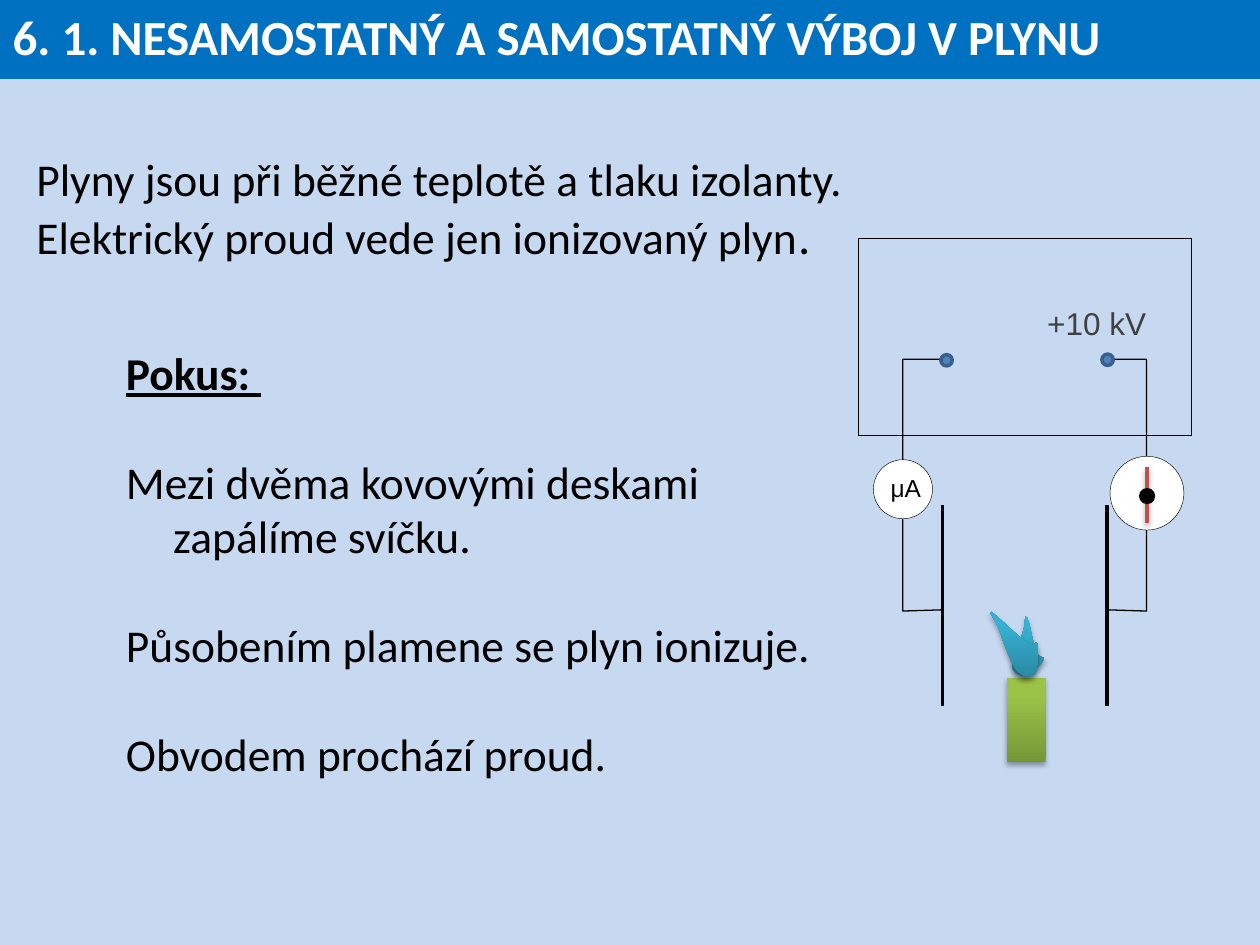
from lxml import etree
from pptx import Presentation
from pptx.dml.color import RGBColor
from pptx.enum.shapes import MSO_CONNECTOR as CONN, MSO_SHAPE as SHAPE
from pptx.enum.text import MSO_ANCHOR as ANCHOR, PP_ALIGN as ALIGN
from pptx.oxml.ns import qn
from pptx.util import Pt

FLAME_COLORS = "2A88A2", "37B1D2"
CANDLE_COLORS = "779737", "9BC348"
BACK_FLAME = [
    (7.2, 36),
    (4.3, 36), (0, 33.8), (0, 29.5),
    (0, 25.2), (5, 15.1), (6.5, 10.1),
    (7.9, 5.8), (7.2, 0), (8.6, 2.2),
    (10.1, 4.3), (12.2, 18.7), (14.4, 22.3),
    (15.8, 26.6), (19.4, 23.8), (18.7, 25.9),
    (17.3, 28.8), (10.1, 35.3), (7.2, 36),
]
FRONT_FLAME = [
    (27.4, 36.7),
    (25.2, 39.6), (20.2, 38.9), (16.6, 34.6),
    (13, 30.2), (8.6, 16.6), (6.5, 10.8),
    (4.3, 5.8), (0, 0), (2.2, 1.4),
    (5, 2.9), (18, 15.8), (22.3, 18.7),
    (26.6, 22.3), (27.4, 16.6), (28.8, 20.2),
    (29.5, 23), (28.8, 34.6), (27.4, 36.7),
]


def rgb(color):
    return RGBColor.from_string(color)


def assign(obj, values):
    for name, value in values.items():
        setattr(obj, name, value)


def set_line(sp, color, width):
    sp.line.fill.solid()
    sp.line.color.rgb = rgb(color)
    sp.line.width = Pt(width)


def set_gradient(sp, colors):
    sp.fill.gradient()
    sp.fill.gradient_angle = 90
    for stop, color, position in zip(sp.fill.gradient_stops, colors, (0, 0.8)):
        stop.color.rgb = rgb(color)
        stop.position = position
    sp.line.fill.background()


def add_shadow(effects):
    shadow = etree.SubElement(effects, qn("a:outerShdw"), blurRad=str(Pt(3.1)),
                              dist=str(Pt(1.8)), dir="5400000", rotWithShape="0")
    color = etree.SubElement(shadow, qn("a:srgbClr"), val="000000")
    etree.SubElement(color, qn("a:alpha"), val="35000")


def add_box(s, kind, x, y, w, h, fill=None, line=None):
    sp = s.shapes.add_shape(kind, Pt(x), Pt(y), Pt(w), Pt(h))
    sp.shadow.inherit = False
    if fill:
        sp.fill.solid()
        sp.fill.fore_color.rgb = rgb(fill)
    else:
        sp.fill.background()
    if line:
        set_line(sp, *line)
    return sp


def add_disc(s, cx, cy, d, fill, line):
    return add_box(s, SHAPE.OVAL, cx - d / 2, cy - d / 2, d, d, fill, line)


def add_straight(s, x, y1, y2, color, width):
    c = s.shapes.add_connector(CONN.STRAIGHT, Pt(x), Pt(y1), Pt(x), Pt(y2))
    set_line(c, color, width)
    return etree.SubElement(c._element.spPr, qn("a:effectLst"))


def add_outline(s, x, y, points, close):
    pts = [(Pt(x + px), Pt(y + py)) for px, py in points]
    builder = s.shapes.build_freeform(*pts[0])
    builder.add_line_segments(pts[1:], close=close)
    sp = builder.convert_to_shape()
    sp.shadow.inherit = False
    return sp


def add_run(p, text, size, color="000000", font="Calibri", **extra):
    r = p.add_run()
    r.text = text
    assign(r.font, {"size": Pt(size), "name": font, **extra})
    r.font.color.rgb = rgb(color)


def add_label(s, x, y, w, h, text, size, color):
    tf = s.shapes.add_textbox(Pt(x), Pt(y), Pt(w), Pt(h)).text_frame
    tf.word_wrap = False
    add_run(tf.paragraphs[0], text, size, color, "Arial")


def bend_segments(sp):
    segments = list(sp._element.iter(qn("a:lnTo")))
    for i in range(0, len(segments) - 2, 3):
        curve = etree.Element(qn("a:cubicBezTo"))
        segments[i].addprevious(curve)
        for segment in segments[i:i + 3]:
            curve.append(segment[0])
            segment.getparent().remove(segment)


def add_flame(s, x, y, points):
    sp = add_outline(s, x, y, points, True)
    bend_segments(sp)
    set_gradient(sp, FLAME_COLORS)
    add_shadow(sp._element.spPr.find(qn("a:effectLst")))


def add_title(s, x, y, w, h):
    sp = s.shapes.title
    assign(sp, {"left": Pt(x), "top": Pt(y), "width": Pt(w), "height": Pt(h)})
    sp.fill.solid()
    sp.fill.fore_color.rgb = rgb("0070C0")
    set_line(sp, "0070C0", 4.5)
    sp.text_frame.vertical_anchor = ANCHOR.MIDDLE
    p = sp.text_frame.paragraphs[0]
    p.alignment = ALIGN.LEFT
    add_run(p, "6. 1. NESAMOSTATNÝ A SAMOSTATNÝ VÝBOJ V PLYNU", 28, "FFFFFF", bold=True)


def add_body(s, x, y, w, h):
    tf = s.shapes.add_textbox(Pt(x), Pt(y), Pt(w), Pt(h)).text_frame
    tf.word_wrap = True
    bold = {"bold": True, "underline": True}
    rows = [
        ("Plyny jsou při běžné teplotě a tlaku izolanty.", 27, 0, {}),
        ("Elektrický proud vede jen ionizovaný plyn", 27, 0, {}),
        ("Pokus: ", 78.2, 45.8, bold),
        ("Mezi dvěma kovovými deskami\vzapálíme svíčku.", 78.2, 31.2, {}),
        ("Působením plamene se plyn ionizuje.", 78.2, 31, {}),
        ("Obvodem prochází proud.", 78.2, 31.2, {}),
    ]
    for i, (text, margin, before, extra) in enumerate(rows):
        p = tf.add_paragraph() if i else tf.paragraphs[0]
        p.space_before = Pt(before)
        p._p.get_or_add_pPr().set("marL", str(Pt(margin)))
        p._p.get_or_add_pPr().set("indent", str(Pt(-27)))
        for j, part in enumerate(text.split("\v")):
            if j:
                p.add_line_break()
            add_run(p, part, 26, **extra)
    add_run(tf.paragraphs[1], ".", 28)


def add_apparatus(s, x, y, w, h):
    add_box(s, SHAPE.RECTANGLE, x, y, w, 112.6, line=("000000", 0.25))
    for plate_x in (48.3, 142.2):
        add_straight(s, x + plate_x, y + 152.6, y + 267.1, "000000", 2.25)

    candle = add_box(s, SHAPE.RECTANGLE, x + 85, y + 251.3, 22.2, h - 251.3)
    set_gradient(candle, CANDLE_COLORS)
    add_shadow(candle._element.spPr.find(qn("a:effectLst")))
    add_flame(s, x + 87.9, y + 214.5, BACK_FLAME)

    for plate_x, wire_x, end_x in ((48.3, 25.6, 47.5), (141.9, 164.9, 142.6)):
        points = [(plate_x, 212.4), (wire_x, 213.1), (wire_x, 69.2), (end_x, 69.2)]
        wire = add_outline(s, x, y, points, False)
        wire.fill.background()
        set_line(wire, "000000", 0.75)
    for cx, cy in ((50.6, 69.8), (142.6, 69.5)):
        add_disc(s, x + cx, y + cy, 6.5, "4F81BD", ("3A5F8C", 2))

    add_disc(s, x + 25.7, y + 143.5, 33.8, "FFFFFF", ("000000", 0.25))
    add_label(s, x + 11.5, y + 130.7, 32.4, 24.5, "μA", 14, "000000")
    add_label(s, x + 101, y + 34.1, 71.3, 28.8, "+10 kV", 18, "404040")
    add_flame(s, x + 73.9, y + 212.2, FRONT_FLAME)

    add_disc(s, x + 165.1, y + 145.7, 42.2, "FFFFFF", ("000000", 0.25))
    add_shadow(add_straight(s, x + 165.2, y + 131, y + 162.7, "C0504D", 2))
    add_disc(s, x + 165.2, y + 147.4, 7.2, "000000", ("000000", 2))


def main():
    prs = Presentation()
    assign(prs, {"slide_width": Pt(720), "slide_height": Pt(540)})
    s = prs.slides.add_slide(prs.slide_layouts[5])
    s.background.fill.solid()
    s.background.fill.fore_color.rgb = rgb("C6D9F1")
    add_title(s, 0, -2.2, 720, 45.4)
    add_body(s, 13.7, 82.8, 686.2, 389.5)
    add_apparatus(s, 490.3, 136.1, 190.5, 299.5)
    prs.save("out.pptx")


if __name__ == "__main__":
    main()
